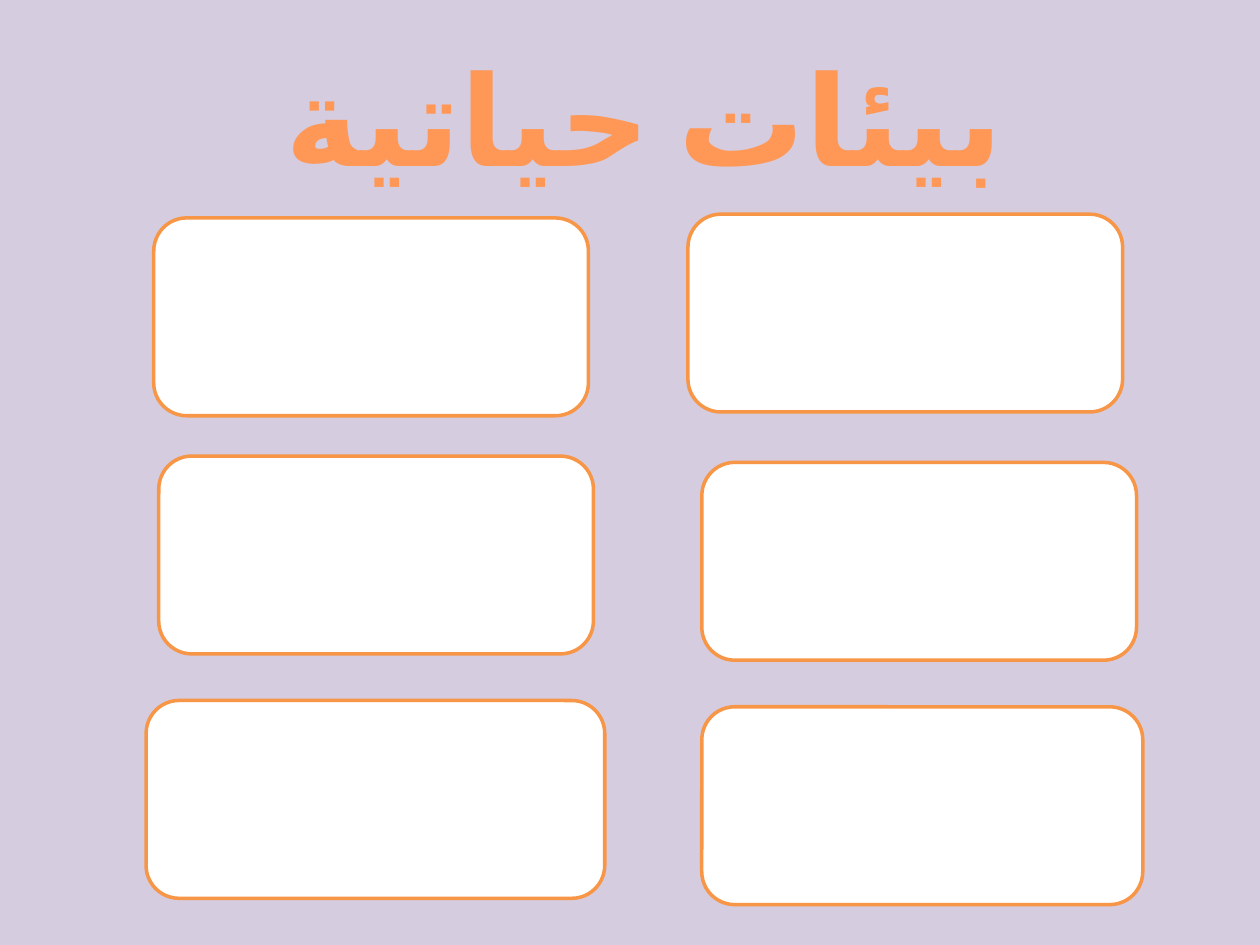
from dataclasses import dataclass

from lxml import etree
from pptx import Presentation
from pptx.dml.color import RGBColor
from pptx.enum.shapes import MSO_SHAPE
from pptx.enum.text import MSO_ANCHOR, PP_ALIGN
from pptx.oxml.ns import qn
from pptx.slide import Slide
from pptx.text.text import TextFrame
from pptx.util import Inches, Pt

ROUNDED = MSO_SHAPE.ROUNDED_RECTANGLE
MIDDLE = MSO_ANCHOR.MIDDLE
CENTER = PP_ALIGN.CENTER

GRID_LEFT, GRID_TOP = 1.22, 1.7
COLUMN_PITCH, ROW_PITCH = 4.35, 1.94
CARD_HEIGHT = 1.57

BACKGROUND, CARD_FILL, CARD_LINE = "D5CCDF", "FFFFFF", "F79646"
TITLE_COLOR = "FF9856"
TITLE_FONT = "Calibri"
TITLE_FORMAT = {"size": Pt(72), "bold": True, "name": TITLE_FONT}


@dataclass
class HabitatCard:
    column: int
    row: int
    shift_x: float = 0
    shift_y: float = 0
    width: float = 3.45


HABITAT_CARDS = [
    HabitatCard(1, 0, shift_x=-0.11),
    HabitatCard(1, 1, shift_y=0.03),
    HabitatCard(0, 1, shift_x=0.04, shift_y=-0.02),
    HabitatCard(0, 0, shift_y=0.03),
    HabitatCard(1, 2, shift_y=0.03, width=3.5),
    HabitatCard(0, 2, shift_x=-0.06, shift_y=-0.02, width=3.64),
]


def color(value: str) -> RGBColor:
    return RGBColor.from_string(value)


def write_arabic(frame: TextFrame, text: str, formats: dict, ink: str) -> None:
    frame.word_wrap = True
    frame.vertical_anchor = MIDDLE
    paragraph = frame.paragraphs[0]
    paragraph.alignment = CENTER
    paragraph._p.get_or_add_pPr().set("rtl", "1")
    run = paragraph.add_run()
    run.text = text
    for attribute, value in formats.items():
        setattr(run.font, attribute, value)
    run.font.color.rgb = color(ink)
    properties = run._r.get_or_add_rPr()
    properties.set("lang", "ar-SA")
    etree.SubElement(properties, qn("a:cs")).set("typeface", TITLE_FONT)


def draw_card(slide: Slide, habitat: HabitatCard) -> None:
    left = GRID_LEFT + habitat.column * COLUMN_PITCH + habitat.shift_x
    top = GRID_TOP + habitat.row * ROW_PITCH + habitat.shift_y
    card = slide.shapes.add_shape(
        ROUNDED, Inches(left), Inches(top), Inches(habitat.width), Inches(CARD_HEIGHT)
    )
    card.shadow.inherit = False
    card.fill.solid()
    card.fill.fore_color.rgb = color(CARD_FILL)
    card.line.color.rgb = color(CARD_LINE)
    card.line.width = Pt(2)


def main() -> None:
    deck = Presentation()
    deck.slide_width, deck.slide_height = Inches(10), Inches(7.5)
    slide = deck.slides.add_slide(deck.slide_layouts[5])
    slide.background.fill.solid()
    slide.background.fill.fore_color.rgb = color(BACKGROUND)

    title = slide.shapes.title
    title.left, title.top = Inches(0.5), Inches(0.3)
    title.width, title.height = Inches(9), Inches(1.25)
    write_arabic(title.text_frame, "بيئات حياتية ", TITLE_FORMAT, TITLE_COLOR)

    for habitat in HABITAT_CARDS:
        draw_card(slide, habitat)
    deck.save("out.pptx")


if __name__ == "__main__":
    main()
